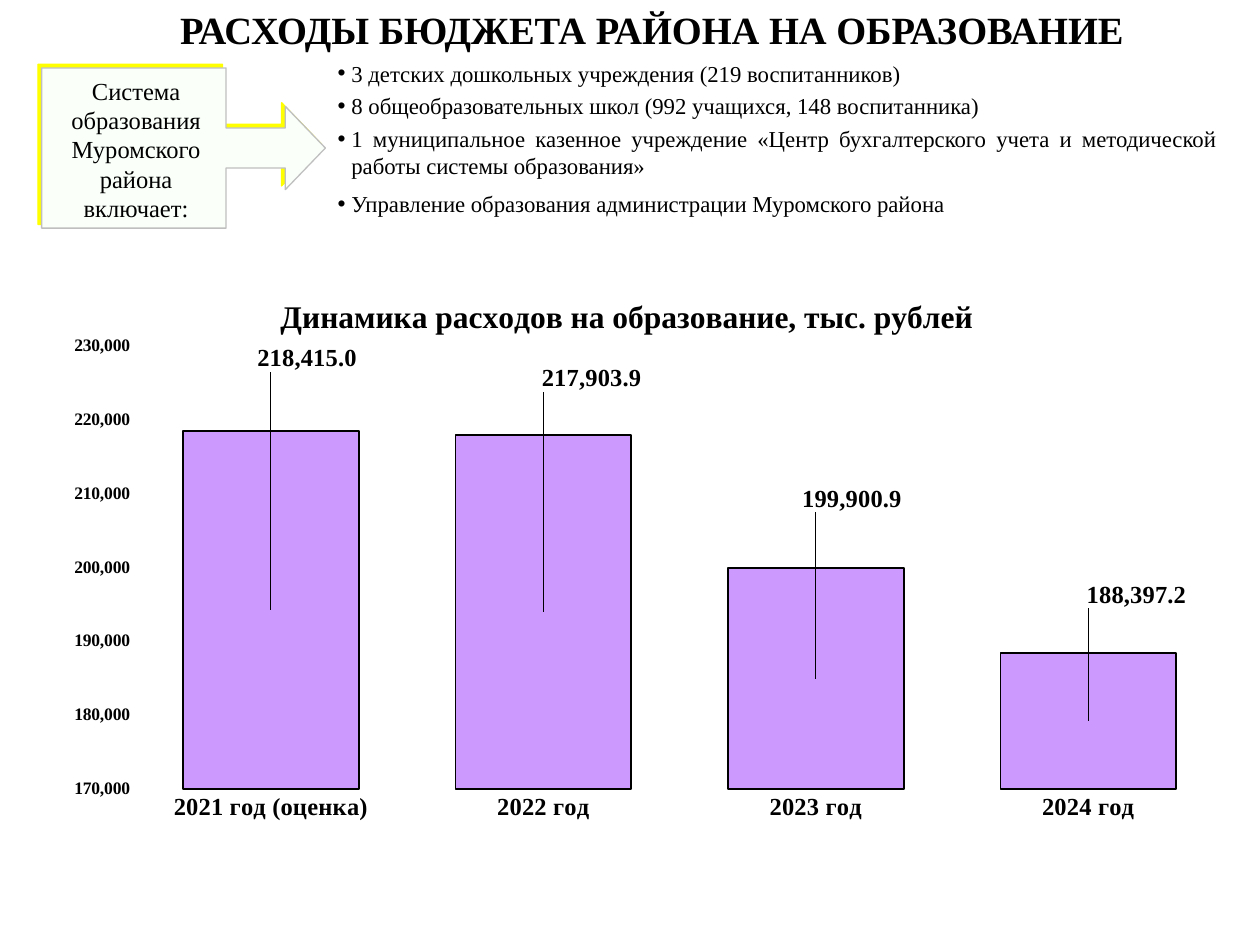
import pptx
import pptx.chart.data
import pptx.dml.color
import pptx.enum.chart
import pptx.enum.shapes
import pptx.enum.text
import pptx.oxml
import pptx.oxml.ns
import pptx.util
from pptx.util import Cm, Pt

RGBColor = pptx.dml.color.RGBColor
BLACK = RGBColor(0x00, 0x00, 0x00)
WHITE = RGBColor(0xFF, 0xFF, 0xFF)
PALE_GREEN = RGBColor(0xFA, 0xFF, 0xFA)
GREY = RGBColor(0xBF, 0xBF, 0xBF)
YELLOW = RGBColor(0xFF, 0xFF, 0x00)
LILAC = RGBColor(0xCC, 0x99, 0xFF)

FONT = "Times New Roman"
ALIGN = pptx.enum.text.PP_ALIGN
ANCHOR = pptx.enum.text.MSO_ANCHOR

INSTITUTIONS = [  # text, space before in points
    ("3 детских дошкольных учреждения (219 воспитанников)", 0),
    ("8 общеобразовательных школ (992 учащихся, 148 воспитанника)", 3),
    ("1 муниципальное казенное учреждение «Центр бухгалтерского учета "
     "и методической работы системы образования»", 3),
    ("Управление образования администрации Муромского района", 6),
]
SPENDING = [  # year, thousand roubles, label shift as a share of the chart
    ("2021 год (оценка)", 218415.0, (0.03, -0.42)),
    ("2022 год", 217903.9, (0.04, -0.39)),
    ("2023 год", 199900.9, (0.03, -0.3)),
    ("2024 год", 188397.2, (0.04, -0.21)),
]


def xml(text):
    """Parse one element in the drawing or chart namespace."""
    tag_end = min(text.index(c) for c in " >/" if c in text)
    return pptx.oxml.parse_xml(
        text[:tag_end] + " " + pptx.oxml.ns.nsdecls("a", "c") + text[tag_end:])


def format_font(font, size, bold=False, color=BLACK):
    font.name, font.size, font.bold = FONT, Pt(size), bold
    font.color.rgb = color


def add_text(tf, text, size=14, bold=False, align=ALIGN.LEFT, before=0,
             bullet=False, first=True):
    p = tf.paragraphs[0] if first else tf.add_paragraph()
    p.alignment = align
    p.space_before = Pt(before)
    pPr = p._p.get_or_add_pPr()
    if bullet:
        pPr.set("marL", str(Cm(0.28)))
        pPr.set("indent", str(-Cm(0.28)))
        pPr.append(xml('<a:buChar char="•"/>'))
    r = p.add_run()
    r.text = text
    format_font(r.font, size, bold)


def place(sp, left, top, width, height, anchor=ANCHOR.TOP):
    sp.left, sp.top, sp.width, sp.height = map(Cm, (left, top, width, height))
    tf = sp.text_frame
    tf.word_wrap = True
    tf.auto_size = pptx.enum.text.MSO_AUTO_SIZE.NONE
    tf.vertical_anchor = anchor
    return tf


def add_callout(s):
    sp = s.shapes.add_shape(
        pptx.enum.shapes.MSO_SHAPE.RIGHT_ARROW_CALLOUT,
        Cm(0.84), Cm(1.37), Cm(5.72), Cm(3.23))
    for i, value in enumerate((0.25, 0.26, 0.25, 0.65)):
        sp.adjustments[i] = value
    sp.fill.solid()
    sp.fill.fore_color.rgb = PALE_GREEN
    sp.line.color.rgb = GREY
    sp.line.width = Pt(0.75)
    # Yellow shadow to the upper left
    sp._element.spPr.append(xml(
        f'<a:effectLst><a:outerShdw dist="{Pt(3)}" dir="13500000" algn="ctr" '
        f'rotWithShape="0"><a:srgbClr val="{YELLOW}"/></a:outerShdw></a:effectLst>'))
    label = s.shapes.add_textbox(0, 0, 0, 0)
    add_text(place(label, 0.84, 1.4, 3.81, 3.25),
             "Система образования Муромского района включает:",
             align=ALIGN.CENTER)


def manual_layout(x, y, edge=False):
    modes = '<c:xMode val="edge"/><c:yMode val="edge"/>' if edge else ""
    return (f'<c:layout><c:manualLayout>{modes}<c:x val="{x}"/>'
            f'<c:y val="{y}"/></c:manualLayout></c:layout>')


def format_axis(axis, size):
    axis.major_tick_mark = axis.minor_tick_mark = pptx.enum.chart.XL_TICK_MARK.NONE
    format_font(axis.tick_labels.font, size, bold=True)
    axis.format.line.color.rgb = WHITE
    axis.format.line.width = Pt(0.25)


def add_label(point, shift):
    label = point.data_label
    format_font(label.font, 14, bold=True)
    label.position = pptx.enum.chart.XL_LABEL_POSITION.CENTER
    idx = label._dLbl.find(pptx.oxml.ns.qn("c:idx"))
    idx.addnext(xml('<c:numFmt formatCode="#,##0.0" sourceLinked="0"/>'))
    idx.addnext(xml(manual_layout(*shift)))


def add_spending_chart(s):
    years, amounts, shifts = zip(*SPENDING)
    data = pptx.chart.data.CategoryChartData(number_format="#,##0.0")
    data.categories = years
    data.add_series("Series 1", amounts)
    chart = s.shapes.add_chart(
        pptx.enum.chart.XL_CHART_TYPE.COLUMN_STACKED,
        Cm(0.43), Cm(5.28), Cm(24.33), Cm(12.07), data).chart
    chart.has_legend = False
    format_font(chart.font, 10)

    # Title and plot area
    chart.has_title = True
    add_text(chart.chart_title.text_frame,
             "Динамика расходов на образование, тыс. рублей", size=18, bold=True)
    title = chart.chart_title._element
    for old in title.findall(pptx.oxml.ns.qn("c:layout")):
        title.remove(old)
    title.find(pptx.oxml.ns.qn("c:tx")).addnext(
        xml(manual_layout(0.21, 0.05, edge=True)))
    plot_area = chart._chartSpace.chart.plotArea
    for old in plot_area.findall(pptx.oxml.ns.qn("c:layout")):
        plot_area.remove(old)
    plot_area.insert(0, xml(
        '<c:layout><c:manualLayout><c:layoutTarget val="inner"/>'
        '<c:xMode val="edge"/><c:yMode val="edge"/><c:x val="0.094"/>'
        '<c:y val="0.14"/><c:w val="0.903"/><c:h val="0.74"/>'
        '</c:manualLayout></c:layout>'))

    # Axes
    format_axis(chart.category_axis, 14)
    axis = chart.value_axis
    format_axis(axis, 10)
    axis.minimum_scale, axis.maximum_scale = 170000, 230000
    axis.major_unit = 10000
    axis.tick_labels.number_format = "#,##0"
    axis.tick_labels.number_format_is_linked = False
    axis.major_gridlines.format.line.color.rgb = WHITE
    axis.major_gridlines.format.line.width = Pt(0.25)

    # Columns and their labels
    plot = chart.plots[0]
    plot.gap_width, plot.overlap = 55, 100
    plot.vary_by_categories = False
    series = plot.series[0]
    series.format.fill.solid()
    series.format.fill.fore_color.rgb = LILAC
    series.format.line.color.rgb = BLACK
    series.format.line.width = Pt(1)
    for i, shift in enumerate(shifts):
        add_label(series.points[i], shift)


def main():
    prs = pptx.Presentation()
    prs.slide_width, prs.slide_height = Cm(25.4), Cm(19.05)
    s = prs.slides.add_slide(prs.slide_layouts[1])

    # Slide title
    tf = place(s.shapes.title, 2.74, 0, 20.8, 1.2)
    add_text(tf, "РАСХОДЫ БЮДЖЕТА РАЙОНА НА ОБРАЗОВАНИЕ", size=22, bold=True,
             align=ALIGN.CENTER)

    # What the education system includes
    add_callout(s)
    tf = place(s.placeholders[1], 6.55, 1.07, 18.21, 3.4)
    for i, (text, before) in enumerate(INSTITUTIONS):
        add_text(tf, text, size=13, align=ALIGN.JUSTIFY, before=before,
                 bullet=True, first=i == 0)

    add_spending_chart(s)
    prs.save("out.pptx")


if __name__ == "__main__":
    main()
